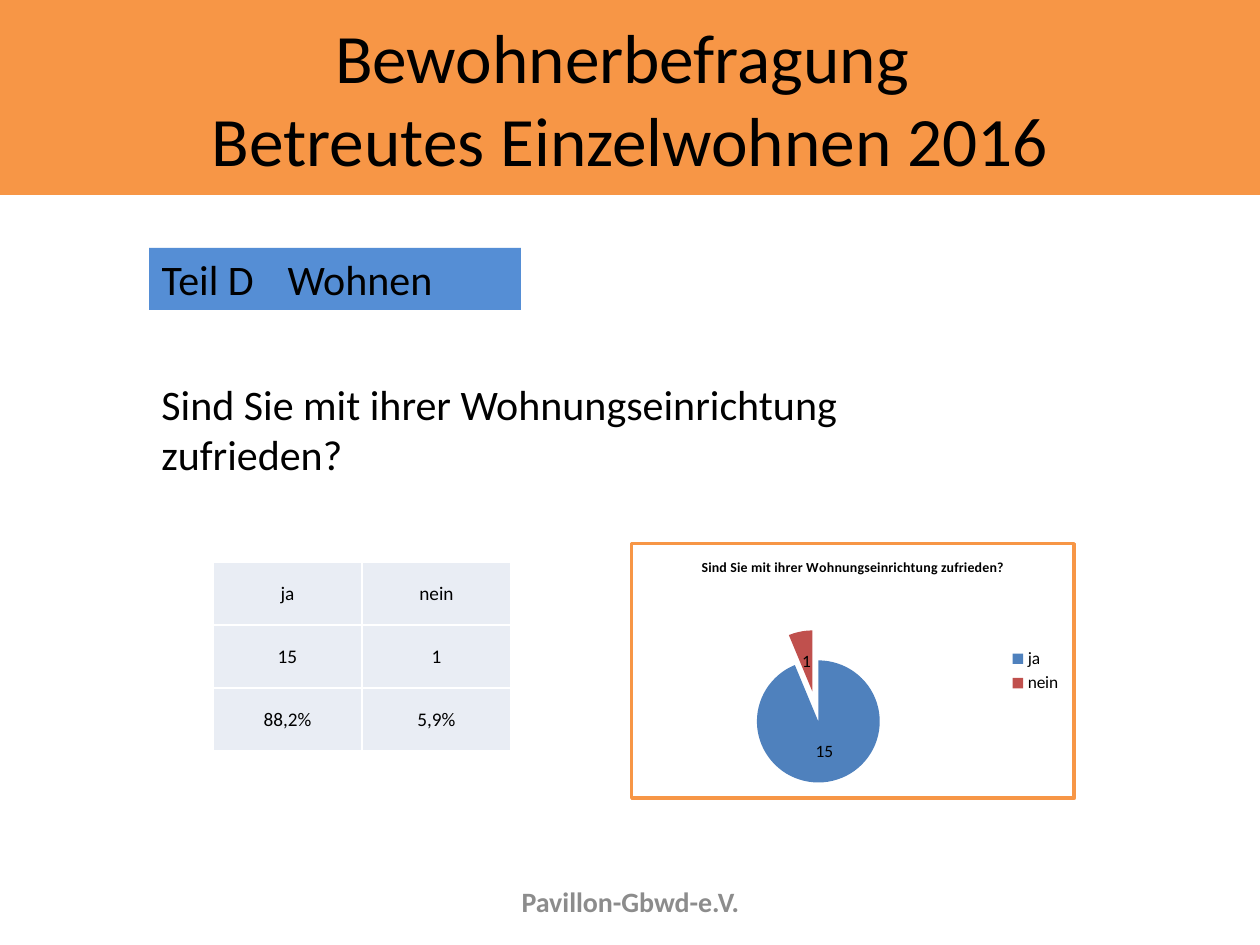
from pptx import Presentation
from pptx.chart.data import CategoryChartData
from pptx.dml.color import RGBColor
from pptx.enum.chart import XL_CHART_TYPE, XL_LABEL_POSITION, XL_LEGEND_POSITION
from pptx.enum.text import MSO_ANCHOR, MSO_AUTO_SIZE, PP_ALIGN
from pptx.oxml import parse_xml
from pptx.oxml.ns import nsdecls, qn
from pptx.util import Pt

PIE = XL_CHART_TYPE.PIE
LABEL_CENTER = XL_LABEL_POSITION.CENTER
LEGEND_RIGHT = XL_LEGEND_POSITION.RIGHT
MIDDLE, TOP = MSO_ANCHOR.MIDDLE, MSO_ANCHOR.TOP
FIXED, GROW = MSO_AUTO_SIZE.NONE, MSO_AUTO_SIZE.SHAPE_TO_FIT_TEXT
LEFT, CENTER = PP_ALIGN.LEFT, PP_ALIGN.CENTER

ORANGE = RGBColor(0xF7, 0x96, 0x46)
SECTION_BLUE = RGBColor(0x55, 0x8E, 0xD5)
YES_BLUE = RGBColor(0x4F, 0x81, 0xBD)
NO_RED = RGBColor(0xC0, 0x50, 0x4D)
CELL_GRAY = RGBColor(0xE9, 0xED, 0xF4)
FOOTER_GRAY = RGBColor(0x8C, 0x8C, 0x8C)
BLACK = RGBColor(0, 0, 0)
WHITE = RGBColor(0xFF, 0xFF, 0xFF)

FONT = "Calibri"
EMU_PER_PX = 914400 / 126
QUESTION = "Sind Sie mit ihrer Wohnungseinrichtung zufrieden?"
ANSWERS = ["ja", "nein"]
COUNTS = [15, 1]
SHARES = ["88,2%", "5,9%"]


def px(length):
    return round(length * EMU_PER_PX)


def emu(box):
    return [px(length) for length in box]


def style_font(font, size, color=BLACK, bold=False):
    font.name, font.size, font.bold = FONT, Pt(size), bold
    font.color.rgb = color


def write(frame, text, size, color=BLACK, bold=False, align=LEFT, anchor=MIDDLE):
    frame.text = text
    frame.word_wrap = True
    frame.vertical_anchor = anchor
    for paragraph in frame.paragraphs:
        paragraph.alignment = align
        for run in paragraph.runs:
            style_font(run.font, size, color, bold)


def place(placeholder, box, fill):
    placeholder.left, placeholder.top, placeholder.width, placeholder.height = emu(box)
    placeholder.fill.solid()
    placeholder.fill.fore_color.rgb = fill
    placeholder.text_frame.auto_size = FIXED


def add_title(slide, box):
    title = slide.shapes.title
    place(title, box, ORANGE)
    write(title.text_frame, "Bewohnerbefragung \vBetreutes Einzelwohnen 2016",
          39.6, align=CENTER)


def add_section(slide, box):
    section = slide.placeholders[1]
    place(section, box, SECTION_BLUE)
    write(section.text_frame, "Teil D\tWohnen", 24)
    # Plain line without the bullet and its indent
    properties = section.text_frame.paragraphs[0]._p.get_or_add_pPr()
    properties.set("marL", "0")
    properties.set("indent", "0")
    properties.append(parse_xml(f"<a:buNone {nsdecls('a')}/>"))


def add_question(slide, box):
    question = slide.shapes.add_textbox(*emu(box)).text_frame
    write(question, QUESTION, 24, anchor=TOP)
    question.auto_size = GROW


def add_footer(slide, box):
    footer = slide.shapes.add_textbox(*emu(box)).text_frame
    write(footer, "Pavillon-Gbwd-e.V.", 16, FOOTER_GRAY, True, CENTER)


def border_cell(cell):
    properties = cell._tc.get_or_add_tcPr()
    for side in ("lnL", "lnR", "lnT", "lnB"):
        properties.append(parse_xml(
            f'<a:{side} {nsdecls("a")} w="{Pt(1)}"><a:solidFill>'
            f'<a:srgbClr val="{WHITE}"/></a:solidFill></a:{side}>'))


def add_answer_table(slide, box):
    rows = [ANSWERS, COUNTS, SHARES]
    table = slide.shapes.add_table(len(rows), len(ANSWERS), *emu(box)).table
    table.first_row = table.horz_banding = False
    for r, row in enumerate(rows):
        for c, value in enumerate(row):
            cell = table.cell(r, c)
            border_cell(cell)
            cell.fill.solid()
            cell.fill.fore_color.rgb = CELL_GRAY
            cell.margin_left = cell.margin_right = cell.margin_top = px(1)
            cell.margin_bottom = 0
            write(cell.text_frame, str(value), 11, align=CENTER)
            cell.vertical_anchor = MIDDLE


def frame_chart(chart):
    chart.element.find(qn("c:chart")).addnext(parse_xml(
        f'<c:spPr {nsdecls("c", "a")}>'
        f'<a:solidFill><a:srgbClr val="{WHITE}"/></a:solidFill>'
        f'<a:ln w="{Pt(2)}"><a:solidFill><a:srgbClr val="{ORANGE}"/></a:solidFill></a:ln>'
        '</c:spPr>'))


def position_plot(chart, x, y, w, h):
    plot_area = chart.element.find(".//" + qn("c:plotArea"))
    for layout in plot_area.findall(qn("c:layout")):
        plot_area.remove(layout)
    edges = "".join(f'<c:{key} val="{value}"/>'
                    for key, value in (("x", x), ("y", y), ("w", w), ("h", h)))
    plot_area.insert(0, parse_xml(
        f'<c:layout {nsdecls("c")}><c:manualLayout><c:layoutTarget val="inner"/>'
        f'<c:xMode val="edge"/><c:yMode val="edge"/>{edges}</c:manualLayout></c:layout>'))


def add_answer_pie(slide, box):
    data = CategoryChartData(number_format="#,##0")
    data.categories = ANSWERS
    data.add_series("Series 1", COUNTS)
    chart = slide.shapes.add_chart(PIE, *emu(box), data).chart
    style_font(chart.font, 10)
    frame_chart(chart)
    position_plot(chart, 0.24, 0.34, 0.35, 0.6)

    # Title and legend
    chart.has_title = True
    write_title = chart.chart_title.text_frame
    write_title.text = QUESTION
    style_font(write_title.paragraphs[0].runs[0].font, 8, bold=True)
    chart.chart_title.include_in_layout = False
    chart.has_legend = True
    chart.legend.position = LEGEND_RIGHT
    chart.legend.include_in_layout = False

    # Exploded slices with their counts
    plot = chart.plots[0]
    plot.vary_by_categories = True
    answers = plot.series[0]
    answers._element.find(qn("c:tx")).addnext(
        parse_xml(f'<c:explosion {nsdecls("c")} val="25"/>'))
    for index, color in enumerate((YES_BLUE, NO_RED)):
        fill = answers.points[index].format.fill
        fill.solid()
        fill.fore_color.rgb = color
    labels = answers.data_labels
    labels.show_value = True
    labels.show_percentage = False
    labels.number_format = "#,##0"
    labels.number_format_is_linked = False
    labels.position = LABEL_CENTER
    style_font(labels.font, 10)


def main():
    deck = Presentation()
    deck.slide_width, deck.slide_height = px(1260), px(945)
    slide = deck.slides.add_slide(deck.slide_layouts[1])
    add_title(slide, (0, 0, 1260, 195))
    add_section(slide, (149, 248, 372, 62))
    add_footer(slide, (431, 876, 399, 50))
    add_question(slide, (149, 372, 874, 63))
    add_answer_pie(slide, (630, 542, 446, 258))
    add_answer_table(slide, (213, 562, 298, 189))
    deck.save("out.pptx")


if __name__ == "__main__":
    main()
